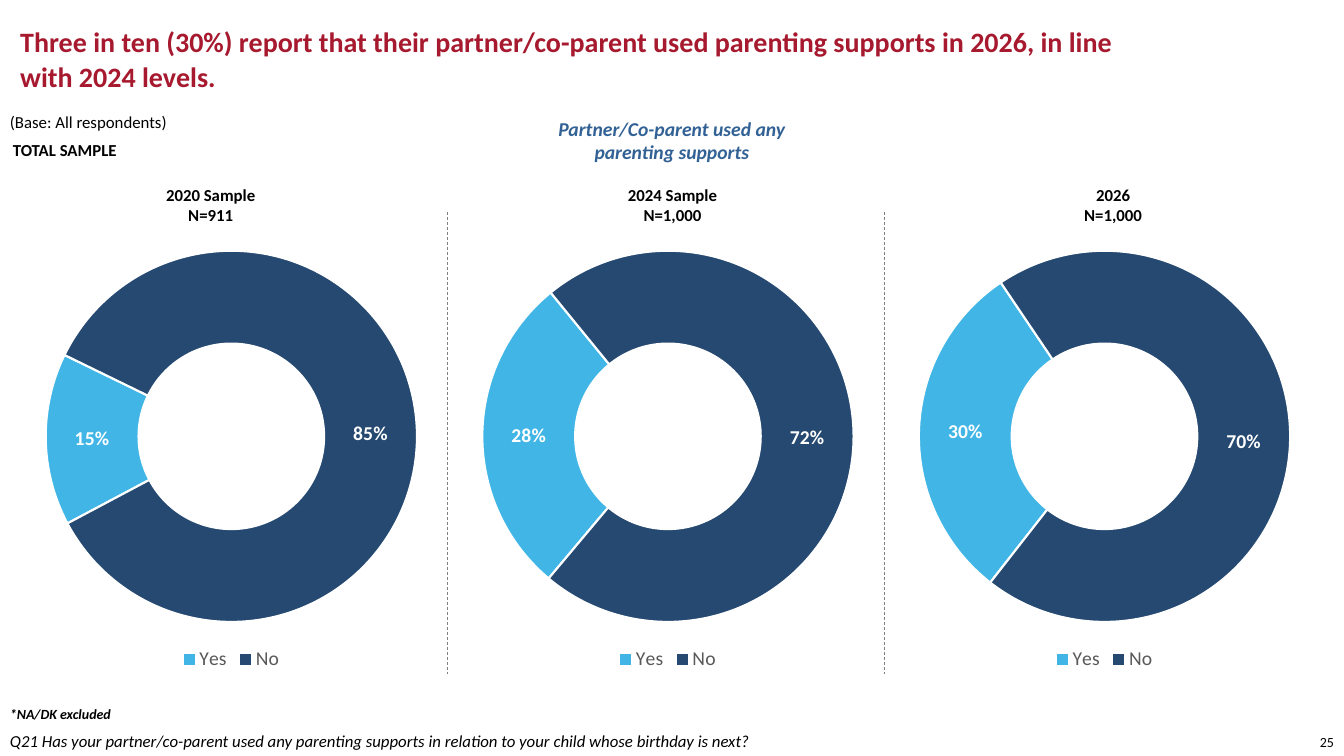
from dataclasses import dataclass

from pptx import Presentation
from pptx.chart.data import CategoryChartData
from pptx.dml.color import RGBColor
from pptx.enum.chart import XL_CHART_TYPE as ChartType, XL_LEGEND_POSITION as LegendPosition
from pptx.enum.dml import MSO_LINE as LineStyle
from pptx.enum.shapes import MSO_CONNECTOR as Connector
from pptx.enum.text import MSO_ANCHOR as Anchor, MSO_AUTO_SIZE as AutoSize, PP_ALIGN as Align
from pptx.oxml import parse_xml
from pptx.oxml.ns import nsdecls
from pptx.util import Inches, Pt

FONT = "Calibri"
COLOURS = {
    "title": "A6192E",
    "text": "000000",
    "question": "326295",
    "Yes": "41B6E6",
    "No": "254970",
    "legend": "595959",
    "divider": "808080",
    "white": "FFFFFF",
}
COLUMN_STEP = 4.33
CHART_LEFT, CHART_TOP, CHART_WIDTH, CHART_HEIGHT = -0.09, 2.35, 4.77, 4.35
DIVIDER_LEFT, DIVIDER_TOP, DIVIDER_BOTTOM = 4.44, 2.1, 6.69


@dataclass
class Box:
    left: float
    top: float
    width: float
    height: float


@dataclass
class Wave:
    heading: str
    heading_box: Box
    yes_share: float
    start_angle: int


WAVES = [
    Wave("2020 Sample\nN=911", Box(1.52, 1.78, 1.14, 0.5), 0.15, 242),
    Wave("2024 Sample\nN=1,000", Box(6.12, 1.78, 1.1, 0.5), 0.28, 220),
    Wave("2026\nN=1,000", Box(10.65, 1.78, 0.78, 0.5), 0.3, 218),
]


def colour(name: str) -> RGBColor:
    return RGBColor.from_string(COLOURS[name])


def style_font(font, size: float, tone: str = "text", bold: bool = False, italic: bool = False) -> None:
    font.name = FONT
    font.size = Pt(size)
    font.bold = bold
    font.italic = italic
    font.color.rgb = colour(tone)


def write(frame, text: str, *, size: float = 12, tone: str = "text", bold: bool = False,
          italic: bool = False, align=Align.LEFT, anchor=Anchor.TOP, wrap: bool = False,
          spacing: float | None = None) -> None:
    frame.word_wrap = wrap
    frame.auto_size = AutoSize.NONE
    frame.vertical_anchor = anchor
    frame.text = text
    for paragraph in frame.paragraphs:
        paragraph.alignment = align
        if spacing:
            paragraph.line_spacing = Pt(spacing)
        for run in paragraph.runs:
            style_font(run.font, size, tone, bold, italic)


def add_text(slide, box: Box, text: str, **text_format) -> None:
    holder = slide.shapes.add_textbox(
        Inches(box.left), Inches(box.top), Inches(box.width), Inches(box.height))
    write(holder.text_frame, text, **text_format)


def add_title(slide, box: Box, text: str, **text_format) -> None:
    title = slide.shapes.title
    title.left, title.top = Inches(box.left), Inches(box.top)
    title.width, title.height = Inches(box.width), Inches(box.height)
    write(title.text_frame, text, **text_format)


def add_doughnut(slide, wave: Wave, column: int) -> None:
    answers = ["Yes", "No"]
    data = CategoryChartData(number_format="0%")
    data.categories = answers
    data.add_series("Series 1", [wave.yes_share, round(1 - wave.yes_share, 2)])
    chart = slide.shapes.add_chart(
        ChartType.DOUGHNUT, Inches(CHART_LEFT + column * COLUMN_STEP), Inches(CHART_TOP),
        Inches(CHART_WIDTH), Inches(CHART_HEIGHT), data).chart
    style_font(chart.font, 14)
    chart.has_title = False
    chart.has_legend = True
    chart.legend.position = LegendPosition.BOTTOM
    chart.legend.include_in_layout = False
    style_font(chart.legend.font, 14, "legend")

    plot = chart.plots[0]
    plot.vary_by_categories = True
    ring = chart.element.xpath(".//c:doughnutChart")[0]
    ring.xpath("c:firstSliceAng")[0].set("val", str(wave.start_angle))
    ring.xpath("c:holeSize")[0].set("val", "55")

    shares = plot.series[0]
    for index, answer in enumerate(answers):
        segment = shares.points[index].format
        segment.fill.solid()
        segment.fill.fore_color.rgb = colour(answer)
        segment.line.color.rgb = colour("white")
        segment.line.width = Pt(1.5)
    labels = shares.data_labels
    labels.show_value = True
    labels.show_percentage = False
    labels.number_format = "0%"
    labels.number_format_is_linked = False
    style_font(labels.font, 14, "white", bold=True)


def add_divider(slide, left: float) -> None:
    divider = slide.shapes.add_connector(
        Connector.STRAIGHT, Inches(left), Inches(DIVIDER_TOP), Inches(left), Inches(DIVIDER_BOTTOM))
    divider.line.color.rgb = colour("divider")
    divider.line.width = Pt(0.5)
    divider.line.dash_style = LineStyle.DASH
    divider.element.spPr.append(parse_xml(f"<a:effectLst {nsdecls('a')}/>"))


def main() -> None:
    deck = Presentation()
    deck.slide_width, deck.slide_height = Inches(13.33), Inches(7.5)
    slide = deck.slides.add_slide(deck.slide_layouts[5])

    add_title(slide, Box(0.1, 0.1, 11.5, 0.96),
              "Three in ten (30%) report that their partner/co-parent used parenting supports "
              "in 2026, in line with 2024 levels.",
              size=20, tone="title", bold=True, anchor=Anchor.MIDDLE, wrap=True, spacing=25)
    add_text(slide, Box(0, 1.06, 1.78, 0.3), "(Base: All respondents)")
    add_text(slide, Box(0.03, 1.34, 1.24, 0.3), "TOTAL SAMPLE", bold=True)
    add_text(slide, Box(5.41, 1.11, 2.51, 0.57), "Partner/Co-parent used any\nparenting supports",
             size=14, tone="question", bold=True, italic=True, align=Align.CENTER)

    for column, wave in enumerate(WAVES):
        add_text(slide, wave.heading_box, wave.heading, bold=True, align=Align.CENTER)
        add_doughnut(slide, wave, column)
    for gap in range(len(WAVES) - 1):
        add_divider(slide, DIVIDER_LEFT + gap * COLUMN_STEP)

    add_text(slide, Box(0, 6.95, 1.22, 0.27), "*NA/DK excluded", size=10, bold=True, italic=True)
    add_text(slide, Box(0, 7.2, 9.75, 0.3),
             "Q21 Has your partner/co-parent used any parenting supports in relation to your "
             "child whose birthday is next?", italic=True, wrap=True)
    add_text(slide, Box(12.96, 7.23, 0.37, 0.27), "25", size=10, align=Align.RIGHT,
             anchor=Anchor.MIDDLE)
    deck.save("out.pptx")


if __name__ == "__main__":
    main()
